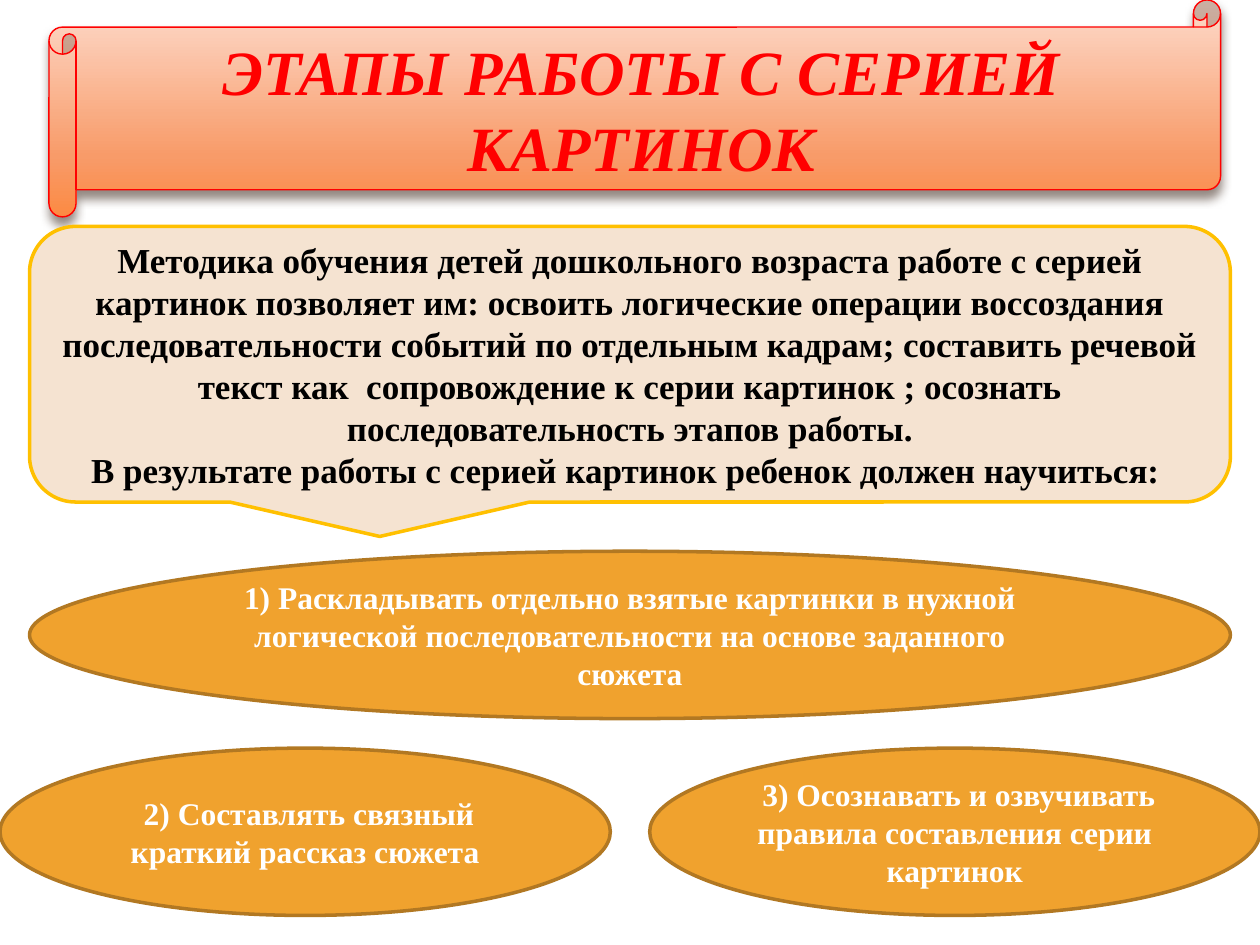
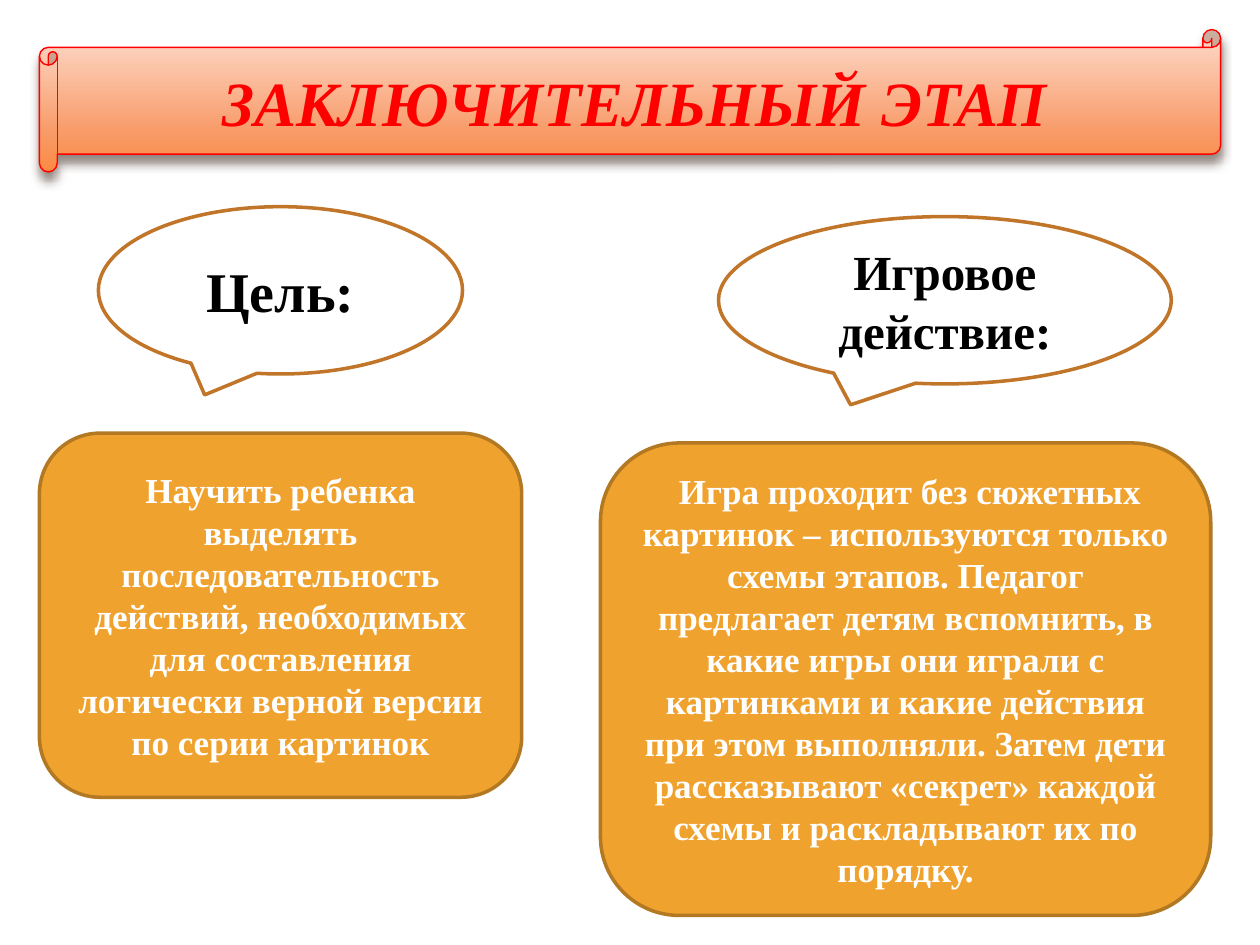
from dataclasses import dataclass

from lxml import etree
from pptx import Presentation
from pptx import util as u
from pptx.dml.color import RGBColor
from pptx.enum import shapes, text

# Shared look
FONT = "Times New Roman"
RED, BLACK, WHITE = "FF0000", "000000", "FFFFFF"
CREAM, GOLD = "F5E3D1", "FFC000"
ORANGE, BROWN, RUST = "F0A22E", "B27822", "C17529"
SCROLL_STOPS = ((0, "FDDBCC"), (72, "F89B69"), (100, "FC8A43"))
SHADOW = "4E3B30"
DRAWING = "http://schemas.openxmlformats.org/drawingml/2006/main"
KIND = shapes.MSO_SHAPE


@dataclass(frozen=True)
class Area:
    left: float
    top: float
    width: float
    height: float

    def lengths(self) -> tuple:
        return tuple(u.Pt(n) for n in (self.left, self.top, self.width, self.height))


@dataclass(frozen=True)
class Style:
    kind: shapes.MSO_SHAPE
    fill: str
    line: str
    color: str


@dataclass(frozen=True)
class Bubble:
    style: Style
    area: Area
    size: float
    lines: tuple


@dataclass(frozen=True)
class Page:
    title: str
    scroll: Area
    bubbles: tuple


INTRO = Style(KIND.ROUNDED_RECTANGULAR_CALLOUT, CREAM, GOLD, BLACK)
SKILL = Style(KIND.OVAL, ORANGE, BROWN, WHITE)
HEADING = Style(KIND.OVAL_CALLOUT, WHITE, RUST, BLACK)
DETAIL = Style(KIND.FLOWCHART_ALTERNATE_PROCESS, ORANGE, BROWN, WHITE)

PAGES = (
    Page("ЭТАПЫ РАБОТЫ С СЕРИЕЙ КАРТИНОК", Area(28, 0, 669.5, 124), (
        Bubble(INTRO, Area(16.9, 129.4, 686.2, 157.5), 20, (
            "Методика обучения детей дошкольного возраста работе с серией картинок "
            "позволяет им: освоить логические операции воссоздания последовательности "
            "событий по отдельным кадрам; составить речевой текст как  сопровождение "
            "к серии картинок ; осознать последовательность этапов работы.",
            "В результате работы с серией картинок ребенок должен научиться: ")),
        Bubble(SKILL, Area(16.9, 315, 686.2, 95.6), 18, (
            "1) Раскладывать отдельно взятые картинки в нужной логической "
            "последовательности на основе заданного сюжета",)),
        Bubble(SKILL, Area(0, 427.5, 348.75, 95.6), 18, (
            " 2) Составлять связный краткий рассказ сюжета",)),
        Bubble(SKILL, Area(371.25, 427.5, 348.75, 95.6), 18, (
            " 3) Осознавать и озвучивать правила составления серии картинок",)),
    )),
    Page("ЗАКЛЮЧИТЕЛЬНЫЙ ЭТАП", Area(22.5, 16.9, 675, 81.4), (
        Bubble(HEADING, Area(56.25, 118.1, 208.1, 95.6), 32, ("Цель:",)),
        Bubble(DETAIL, Area(22.5, 247.5, 275.6, 208.1), 20, (
            "Научить ребенка выделять последовательность действий, необходимых для "
            "составления логически верной версии по серии картинок",)),
        Bubble(HEADING, Area(410.6, 123.75, 258.75, 95.6), 28, ("Игровое действие:",)),
        Bubble(DETAIL, Area(343.1, 253.1, 348.75, 270), 20, (
            " Игра проходит без сюжетных картинок – используются только схемы этапов. "
            "Педагог предлагает детям вспомнить, в какие игры они играли с картинками "
            "и какие действия при этом выполняли. Затем дети рассказывают «секрет» "
            "каждой схемы и раскладывают их по порядку.",)),
    )),
)


def rgb(color: str) -> RGBColor:
    return RGBColor.from_string(color)


def write(shape, lines: tuple, size: float, color: str, italic: bool = False) -> None:
    """Fill a shape with centred bold paragraphs."""
    frame = shape.text_frame
    frame.word_wrap = True
    frame.auto_size = text.MSO_AUTO_SIZE.NONE
    frame.vertical_anchor = text.MSO_ANCHOR.MIDDLE
    frame.text = "\n".join(lines)
    for para in frame.paragraphs:
        para.alignment = text.PP_ALIGN.CENTER
        para.font.name = FONT
        para.font.size = u.Pt(size)
        para.font.bold = True
        para.font.italic = italic
        para.font.color.rgb = rgb(color)


def add_outlined(slide, kind, area: Area, line: str, weight: float):
    shape = slide.shapes.add_shape(kind, *area.lengths())
    shape.shadow.inherit = False
    shape.line.color.rgb = rgb(line)
    shape.line.width = u.Pt(weight)
    return shape


def add_bubble(slide, bubble: Bubble) -> None:
    style = bubble.style
    shape = add_outlined(slide, style.kind, bubble.area, style.line, 2)
    shape.fill.solid()
    shape.fill.fore_color.rgb = rgb(style.fill)
    write(shape, bubble.lines, bubble.size, style.color)


def add_title(slide, title: str, area: Area) -> None:
    """Draw the shaded scroll and lay the title on its flat part."""
    scroll = add_outlined(slide, KIND.HORIZONTAL_SCROLL, area, RED, 0.79)

    # Three-stop gradient, light at the top
    scroll.fill.gradient()
    scroll.fill.gradient_angle = 270
    stops = scroll._element.spPr.find(f".//{{{DRAWING}}}gsLst")
    for stop in list(stops):
        stops.remove(stop)
    for position, color in SCROLL_STOPS:
        stops.append(etree.fromstring(
            f'<a:gs xmlns:a="{DRAWING}" pos="{position * 1000}">'
            f'<a:srgbClr val="{color}"/></a:gs>'))

    # Soft shadow straight below
    effects = scroll._element.spPr.find(f"{{{DRAWING}}}effectLst")
    effects.append(etree.fromstring(
        f'<a:outerShdw xmlns:a="{DRAWING}" blurRad="{u.Pt(6)}" dist="{u.Pt(4)}" '
        f'dir="5400000" rotWithShape="0"><a:srgbClr val="{SHADOW}">'
        '<a:alpha val="60000"/></a:srgbClr></a:outerShdw>'))

    # Title placeholder, in front of the scroll
    roll = area.height / 8
    flat = Area(area.left + roll, area.top + roll,
                area.width - 1.5 * roll, area.height - 2 * roll)
    holder = slide.shapes.title
    holder.left, holder.top, holder.width, holder.height = flat.lengths()
    write(holder, (title,), 36, RED, italic=True)
    holder.text_frame.margin_top = holder.text_frame.margin_bottom = 0
    scroll._element.addnext(holder._element)


def main() -> None:
    deck = Presentation()
    deck.slide_width, deck.slide_height = u.Pt(720), u.Pt(540)
    title_only = deck.slide_layouts[5]
    for page in PAGES:
        slide = deck.slides.add_slide(title_only)
        add_title(slide, page.title, page.scroll)
        for bubble in page.bubbles:
            add_bubble(slide, bubble)
    deck.save("out.pptx")


if __name__ == "__main__":
    main()
